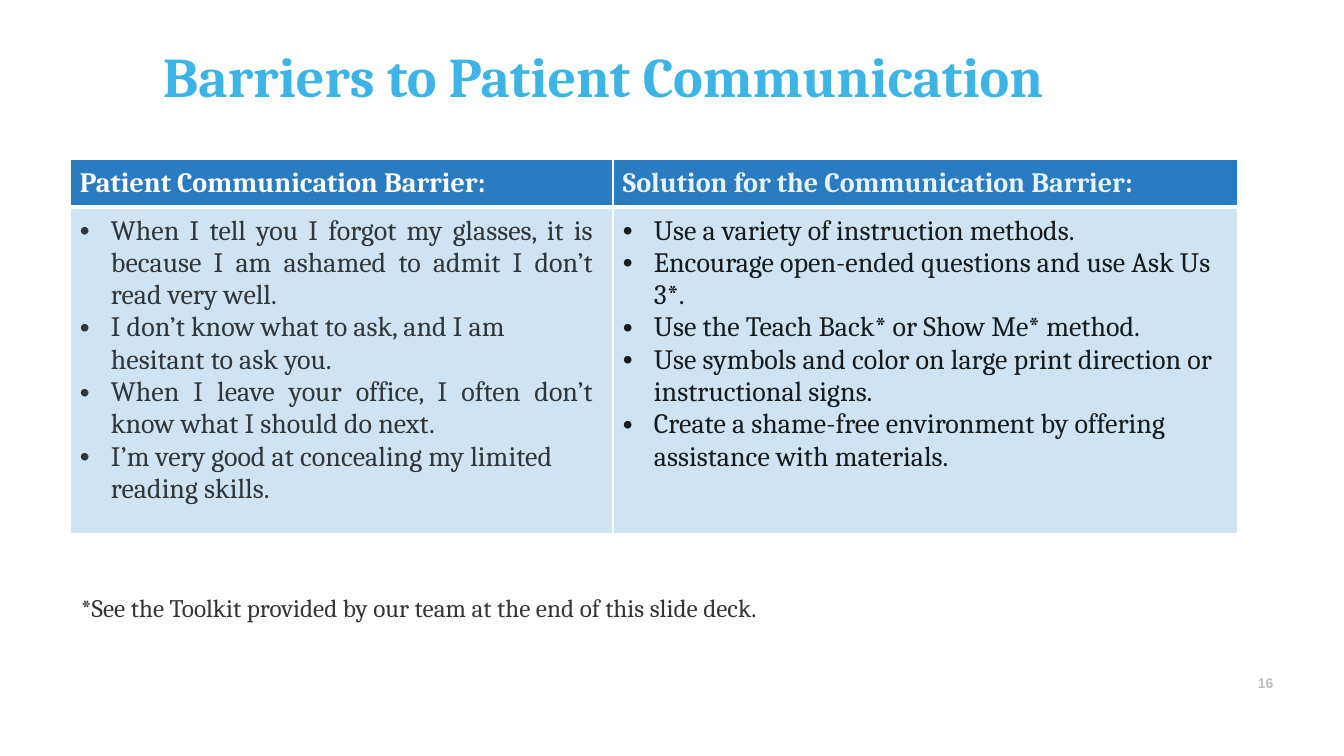
"""Build the slide on barriers to patient communication."""
from lxml.etree import SubElement
from pptx import Presentation
from pptx.dml.color import RGBColor
from pptx.enum.text import MSO_ANCHOR, MSO_AUTO_SIZE, PP_ALIGN
from pptx.oxml.ns import qn
from pptx.util import Emu, Pt

SKY = RGBColor(0x3C, 0xB5, 0xE6)
BLUE = RGBColor(0x29, 0x7C, 0xC1)
PALE = RGBColor(0xCE, 0xE4, 0xF5)
WHITE = RGBColor(0xFF, 0xFF, 0xFF)
ICE = RGBColor(0xE8, 0xF3, 0xF9)
SLATE = RGBColor(0x33, 0x36, 0x37)
INK = RGBColor(0x18, 0x1B, 0x1B)
GRAY = RGBColor(0xBE, 0xBE, 0xBE)

LEFT, JUST = PP_ALIGN.LEFT, PP_ALIGN.JUSTIFY
TITLE = "Barriers to Patient Communication"
NOTE = "*See the Toolkit provided by our team at the end of this slide deck."
NUMBER = "16"
COLUMNS = [
    {
        "head": "Patient Communication Barrier:",
        "tint": WHITE, "ink": SLATE, "width": 543, "right": 20,
        "items": [
            ("When I tell you I forgot my glasses, it is because I am "
             "ashamed to admit I don’t read very well.", JUST),
            ("I don’t know what to ask, and I am hesitant to ask you.", LEFT),
            ("When I leave your office, I often don’t know what I should "
             "do next.", JUST),
            ("I’m very good at concealing my limited reading skills.", LEFT),
        ],
    },
    {
        "head": "Solution for the Communication Barrier:",
        "tint": ICE, "ink": INK, "width": 625, "right": 10,
        "items": [
            ("Use a variety of instruction methods.", LEFT),
            ("Encourage open-ended questions and use Ask Us 3*.", LEFT),
            ("Use the Teach Back* or Show Me* method.", LEFT),
            ("Use symbols and color on large print direction or "
             "instructional signs.", LEFT),
            ("Create a shame-free environment by offering assistance with "
             "materials.", LEFT),
        ],
    },
]
ROWS = (48, 327)
HANG = 31


def px(count):
    """Turn pixels into EMU."""
    return Emu(round(count * 914400 / 100.8))


def style(para, size, color, bold=False, face="Cambria", align=LEFT):
    """Format a paragraph and its runs."""
    para.alignment = align
    para.space_before = para.space_after = Pt(0)
    for run in para.runs:
        font = run.font
        font.name, font.size, font.bold = face, Pt(size), bold
        font.color.rgb = color


def write(shape, text, box, top, *look):
    """Place a shape and fill it with one line of text."""
    shape.left, shape.top, shape.width, shape.height = map(px, box)
    frame = shape.text_frame
    frame.text = text
    frame.word_wrap = True
    frame.auto_size = MSO_AUTO_SIZE.NONE
    frame.vertical_anchor = MSO_ANCHOR.TOP
    frame.margin_left = frame.margin_right = frame.margin_bottom = 0
    frame.margin_top = px(top)
    style(frame.paragraphs[0], *look)


def bullet(para):
    """Give a paragraph a hanging bullet."""
    props = para._p.get_or_add_pPr()
    props.set("marL", str(px(HANG)))
    props.set("indent", str(-px(HANG)))
    SubElement(props, qn("a:buFont")).set("typeface", "Arial")
    SubElement(props, qn("a:buChar")).set("char", "•")


def paint(cell, fill, right, thick):
    """Set the margins, white borders and fill of a cell."""
    cell.margin_left, cell.margin_right = px(10), px(right)
    cell.margin_top, cell.margin_bottom = px(8), 0
    props = cell._tc.get_or_add_tcPr()
    for side in "LRTB":
        line = SubElement(props, qn(f"a:ln{side}"))
        line.set("w", str(Pt(3 if side == thick else 1)))
        solid = SubElement(line, qn("a:solidFill"))
        SubElement(solid, qn("a:srgbClr")).set("val", str(WHITE))
    cell.fill.solid()
    cell.fill.fore_color.rgb = fill


def fill_table(shapes):
    """Add the table of barriers and solutions."""
    width = sum(col["width"] for col in COLUMNS)
    table = shapes.add_table(len(ROWS), len(COLUMNS), px(70), px(159),
                             px(width), px(sum(ROWS))).table
    for row, height in zip(table.rows, ROWS):
        row.height = px(height)
    for index, col in enumerate(COLUMNS):
        table.columns[index].width = px(col["width"])
        head, body = table.cell(0, index), table.cell(1, index)
        paint(head, BLUE, 0, "B")
        paint(body, PALE, col["right"], "T")
        head.text_frame.text = col["head"]
        style(head.text_frame.paragraphs[0], 20, col["tint"], True)
        frame = body.text_frame
        frame.text = "\n".join(text for text, _ in col["items"])
        for para, (_, align) in zip(frame.paragraphs, col["items"]):
            bullet(para)
            style(para, 20, col["ink"], align=align)


def main():
    """Build and save the slide."""
    deck = Presentation()
    deck.slide_width, deck.slide_height = px(1344), px(756)
    shapes = deck.slides.add_slide(deck.slide_layouts[5]).shapes
    write(shapes.title, TITLE, (163, 22, 1022, 111), 20, 40, SKY, True)
    fill_table(shapes)
    for text, box, top, *look in (
        (NUMBER, (1258, 675, 25, 18), 0, 10, GRAY, True, "Arial"),
        (NOTE, (81, 590, 748, 33), 2, 18, SLATE),
    ):
        write(shapes.add_textbox(0, 0, 0, 0), text, box, top, *look)
    deck.save("out.pptx")


if __name__ == "__main__":
    main()
